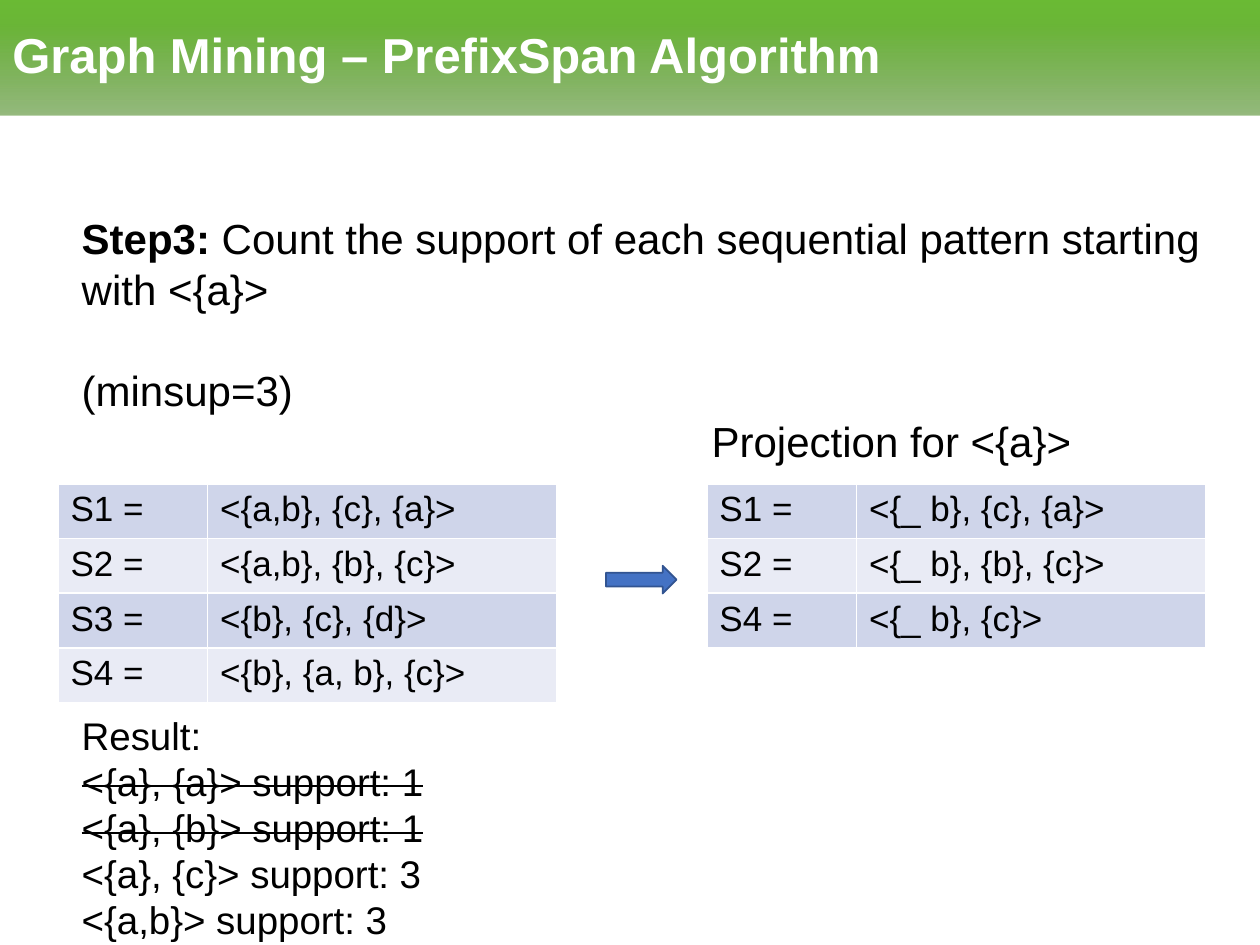
from dataclasses import dataclass

from lxml.etree import SubElement
from pptx import Presentation
from pptx.dml.color import RGBColor
from pptx.enum.shapes import MSO_SHAPE
from pptx.enum.text import MSO_ANCHOR, PP_ALIGN
from pptx.oxml.ns import qn
from pptx.util import Inches, Pt


@dataclass(frozen=True)
class Theme:
    font: str = "Arial"
    text: str = "000000"
    white: str = "FFFFFF"
    bands: tuple = ("CFD5EA", "E9EBF5")
    banner: tuple = ((0, "518D2A", 60), (80, "6AB636", 100), (100, "6ABA34", 100))
    arrow: str = "4472C4"
    arrow_line: str = "325491"
    title_size: int = 28
    body_size: int = 24
    result_size: int = 22
    table_size: int = 20


THEME = Theme()


def rgb(value):
    return RGBColor.from_string(value)


def add_run(p, text, size, color=THEME.text, bold=False, strike=False):
    r = p.add_run()
    r.text = text
    formats = {"name": THEME.font, "size": Pt(size), "bold": bold}
    for name, value in formats.items():
        setattr(r.font, name, value)
    r.font.color.rgb = rgb(color)
    if strike:
        r.font._element.set("strike", "sngStrike")


def add_text(s, box, paragraphs, size):
    tf = s.shapes.add_textbox(*map(Inches, box)).text_frame
    tf.word_wrap = True
    for i, (gap, runs) in enumerate(paragraphs):
        p = tf.paragraphs[0] if i == 0 else tf.add_paragraph()
        p.space_before = Pt(gap)
        for text, formats in runs:
            add_run(p, text, size, **formats)


def add_banner(s, box, title):
    sp = s.shapes.add_shape(MSO_SHAPE.RECTANGLE, *map(Inches, box))
    sp.shadow.inherit = False
    sp.line.fill.background()
    sp.fill.gradient()
    sp.fill.gradient_angle = 90
    stops = sp._element.spPr.find(qn("a:gradFill")).find(qn("a:gsLst"))
    for stop in list(stops):
        stops.remove(stop)
    for position, color, alpha in THEME.banner:
        stop = SubElement(stops, qn("a:gs"), pos=str(position * 1000))
        clr = SubElement(stop, qn("a:srgbClr"), val=color)
        SubElement(clr, qn("a:alpha"), val=str(alpha * 1000))
    tf = sp.text_frame
    tf.word_wrap = True
    tf.vertical_anchor = MSO_ANCHOR.MIDDLE
    p = tf.paragraphs[0]
    for name, value in {"alignment": PP_ALIGN.LEFT, "line_spacing": 0.9}.items():
        setattr(p, name, value)
    add_run(p, title, THEME.title_size, THEME.white, bold=True)


def add_borders(cell):
    tc_pr = cell._tc.get_or_add_tcPr()
    for side in ("lnL", "lnR", "lnT", "lnB"):
        ln = SubElement(tc_pr, qn(f"a:{side}"), w=str(Pt(1)))
        fill = SubElement(ln, qn("a:solidFill"))
        SubElement(fill, qn("a:srgbClr"), val=THEME.white)


def add_sequences(s, box, sequences):
    shape = s.shapes.add_table(len(sequences), 2, *map(Inches, box))
    table = shape.table
    for name in ("first_row", "horz_banding"):
        setattr(table, name, False)
    label_width = 0.3 * box[2]
    for column, width in zip(table.columns, (label_width, box[2] - label_width)):
        column.width = Inches(width)
    for i, (name, sequence) in enumerate(sequences):
        for cell, text in zip(table.rows[i].cells, (f"{name} =", sequence)):
            add_borders(cell)
            cell.fill.solid()
            cell.fill.fore_color.rgb = rgb(THEME.bands[i % 2])
            add_run(cell.text_frame.paragraphs[0], text, THEME.table_size)


def add_arrow(s, box):
    sp = s.shapes.add_shape(MSO_SHAPE.RIGHT_ARROW, *map(Inches, box))
    sp.shadow.inherit = False
    sp.fill.solid()
    sp.fill.fore_color.rgb = rgb(THEME.arrow)
    sp.line.color.rgb = rgb(THEME.arrow_line)
    sp.line.width = Pt(1)


def add_projection(s, box):
    left, top, width, row_height = box
    table_width = 3.96
    database = [
        ("S1", "<{a,b}, {c}, {a}>"),
        ("S2", "<{a,b}, {b}, {c}>"),
        ("S3", "<{b}, {c}, {d}>"),
        ("S4", "<{b}, {a, b}, {c}>"),
    ]
    projected = [
        ("S1", "<{_ b}, {c}, {a}>"),
        ("S2", "<{_ b}, {b}, {c}>"),
        ("S4", "<{_ b}, {c}>"),
    ]
    right = left + width - table_width
    for x, rows in ((left, database), (right, projected)):
        add_sequences(s, (x, top, table_width, row_height * len(rows)), rows)
    add_arrow(s, (left + 4.35, top + 0.65, 0.56, 0.22))
    heading = [(0, [("Projection for <{a}>", {})])]
    add_text(s, (right - 0.06, top - 0.59, table_width, 0.5), heading, THEME.body_size)


def add_step(s, box):
    step = "Count the support of each sequential pattern starting with <{a}>"
    paragraphs = [
        (0, [("Step3: ", {"bold": True}), (step, {})]),
        (29, [("(minsup=3)", {})]),
    ]
    add_text(s, box, paragraphs, THEME.body_size)


def add_result(s, box):
    patterns = [("<{a}, {a}>", 1), ("<{a}, {b}>", 1), ("<{a}, {c}>", 3), ("<{a,b}>", 3)]
    minsup = 3
    paragraphs = [(0, [("Result:", {})])]
    for pattern, support in patterns:
        run = (f"{pattern} support: {support}", {"strike": support < minsup})
        paragraphs.append((0, [run]))
    add_text(s, box, paragraphs, THEME.result_size)


def main():
    prs = Presentation()
    prs.slide_width, prs.slide_height = Inches(10), Inches(7.5)
    s = prs.slides.add_slide(prs.slide_layouts[6])
    add_banner(s, (0, 0, 10, 0.92), "Graph Mining – PrefixSpan Algorithm")
    add_step(s, (0.55, 1.64, 9.19, 1.7))
    add_projection(s, (0.46, 3.84, 9.11, 0.43))
    add_result(s, (0.55, 5.6, 9.19, 1.9))
    prs.save("out.pptx")


if __name__ == "__main__":
    main()
